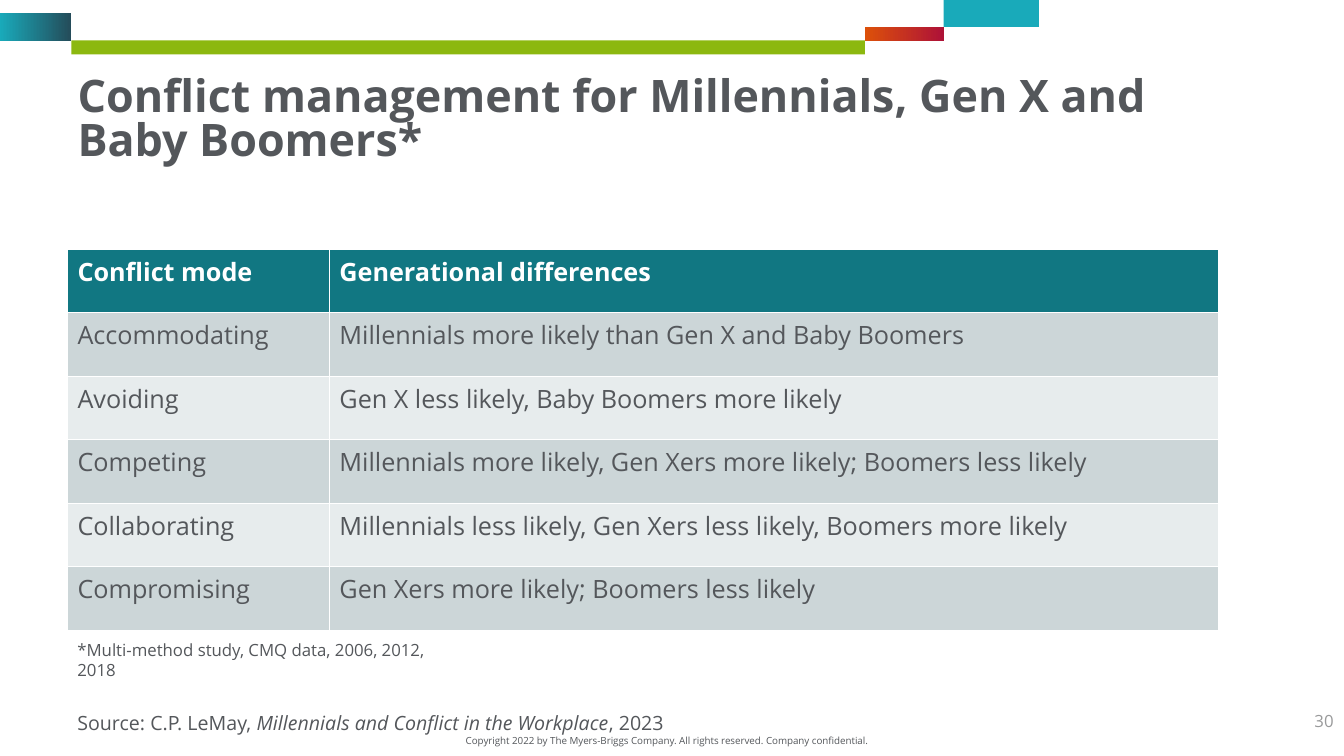
from typing import NamedTuple

from pptx import Presentation
from pptx.dml.color import RGBColor
from pptx.enum.shapes import MSO_SHAPE
from pptx.enum.text import MSO_ANCHOR as Anchor, MSO_AUTO_SIZE as AutoSize, PP_ALIGN as Align
from pptx.util import Cm, Pt

FONT = "Open Sans"
GREY = "54575B"
WHITE = "FFFFFF"
TEAL = "117782"
BANDS = ("CCD6D8", "E7ECED")
LEFT = 1.7
ROW_H = 1.6
COL_WIDTHS = (6.6, 22.4)


class Bar(NamedTuple):
    left: float
    top: float
    width: float
    height: float
    colors: tuple[str, ...]


class Note(NamedTuple):
    left: float
    top: float
    width: float
    height: float
    texts: tuple[str, ...]
    size: float
    color: str = GREY
    align: Align = Align.LEFT
    anchor: Anchor = Anchor.TOP
    wrap: bool = True


BARS = (
    Bar(1.8, 1.02, 20.0, 0.35, ("8CB80F",)),
    Bar(0, 0.33, 1.8, 0.7, ("19AABA", "244C5A")),
    Bar(23.78, -0.02, 2.4, 0.7, ("19AABA",)),
    Bar(21.8, 0.68, 1.98, 0.35, ("DC500A", "AE1237")),
)

NOTES = (
    Note(11.33, 18.39, 10.95, 0.56,
         ("Copyright 2022 by The Myers-Briggs Company. All rights reserved. "
          "Company confidential.",), 7, align=Align.CENTER),
    Note(26.24, 17.65, 7.62, 1.02, ("30",), 12, "999A9B", Align.RIGHT, Anchor.MIDDLE),
    Note(LEFT, 17.8, 16.13, 0.86,
         ("Source: C.P. LeMay, ", "Millennials and Conflict in the Workplace", ", 2023"),
         14, wrap=False),
    Note(LEFT, 16.0, 10.08, 0.76,
         ("*Multi-method study, CMQ data, 2006, 2012, 2018",), 12, wrap=False),
)

ROWS = (
    ("Conflict mode", "Generational differences"),
    ("Accommodating", "Millennials more likely than Gen X and Baby Boomers"),
    ("Avoiding", "Gen X less likely, Baby Boomers more likely"),
    ("Competing", "Millennials more likely, Gen Xers more likely; Boomers less likely"),
    ("Collaborating", "Millennials less likely, Gen Xers less likely, Boomers more likely"),
    ("Compromising", "Gen Xers more likely; Boomers less likely"),
)


def rgb(value: str) -> RGBColor:
    return RGBColor.from_string(value)


def add_text(p, text: str, *, size: float, color: str = GREY,
             bold: bool = False, italic: bool = False) -> None:
    r = p.add_run()
    r.text = text
    r.font.name = FONT
    r.font.size = Pt(size)
    r.font.bold = bold
    r.font.italic = italic
    r.font.color.rgb = rgb(color)


def draw_bar(s, bar: Bar) -> None:
    sp = s.shapes.add_shape(MSO_SHAPE.RECTANGLE, *map(Cm, bar[:4]))
    sp.shadow.inherit = False
    sp.line.fill.background()
    if len(bar.colors) == 1:
        sp.fill.solid()
        sp.fill.fore_color.rgb = rgb(bar.colors[0])
        return
    sp.fill.gradient()
    sp.fill.gradient_angle = 0
    for stop, color, position in zip(sp.fill.gradient_stops, bar.colors, (0, 1)):
        stop.color.rgb = rgb(color)
        stop.position = position


def draw_note(s, note: Note) -> None:
    tf = s.shapes.add_textbox(*map(Cm, note[:4])).text_frame
    tf.word_wrap = note.wrap
    tf.vertical_anchor = note.anchor
    p = tf.paragraphs[0]
    p.alignment = note.align
    for i, text in enumerate(note.texts):
        add_text(p, text, size=note.size, color=note.color, italic=i % 2 == 1)


def draw_title(s, text: str) -> None:
    sp = s.shapes.title
    sp.left, sp.top, sp.width, sp.height = map(Cm, (LEFT, 1.83, 28.7, 2.51))
    tf = sp.text_frame
    tf.word_wrap = True
    tf.auto_size = AutoSize.TEXT_TO_FIT_SHAPE
    tf.vertical_anchor = Anchor.TOP
    p = tf.paragraphs[0]
    p.alignment = Align.LEFT
    p.line_spacing = 0.9
    add_text(p, text, size=32, bold=True)


def draw_table(s) -> None:
    table = s.shapes.add_table(
        len(ROWS), len(COL_WIDTHS), Cm(LEFT), Cm(6.28),
        Cm(sum(COL_WIDTHS)), Cm(ROW_H * len(ROWS))).table
    for column, width in zip(table.columns, COL_WIDTHS):
        column.width = Cm(width)
    for i, row in enumerate(ROWS):
        table.rows[i].height = Cm(ROW_H)
        header = i == 0
        for j, text in enumerate(row):
            cell = table.cell(i, j)
            cell.fill.solid()
            cell.fill.fore_color.rgb = rgb(TEAL if header else BANDS[(i - 1) % 2])
            add_text(cell.text_frame.paragraphs[0], text, size=18,
                     color=WHITE if header else GREY, bold=header)


def main() -> None:
    prs = Presentation()
    prs.slide_width, prs.slide_height = Cm(33.87), Cm(19.05)
    s = prs.slides.add_slide(prs.slide_layouts[5])
    for bar in BARS:
        draw_bar(s, bar)
    draw_title(s, "Conflict management for Millennials, Gen X and Baby Boomers*")
    draw_table(s)
    for note in NOTES:
        draw_note(s, note)
    prs.save("out.pptx")


if __name__ == "__main__":
    main()
